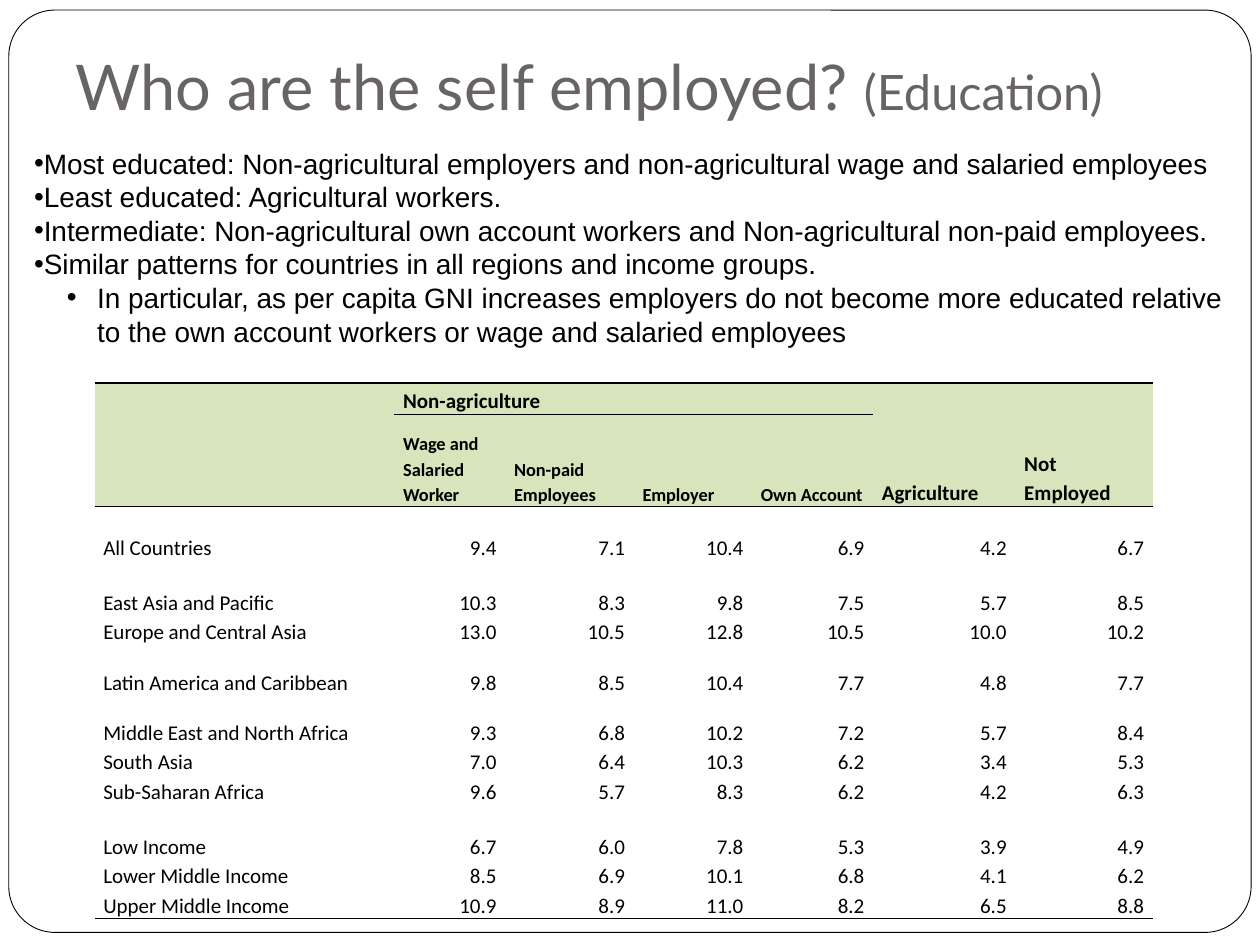
from lxml.etree import SubElement as Sub
from pptx import Presentation
from pptx.dml.color import RGBColor as RGB
from pptx.enum.shapes import MSO_SHAPE as Geo
from pptx.enum.text import MSO_ANCHOR as Anchor, MSO_AUTO_SIZE as Auto, PP_ALIGN as Align
from pptx.oxml.ns import qn
from pptx.util import Inches, Pt

BLACK = RGB(0, 0, 0)
WHITE = RGB(255, 255, 255)
GREY = RGB(0x69, 0x64, 0x64)
GREEN = RGB(0xD7, 0xE4, 0xBC)

POINTS = [
    (0, "Most educated: Non-agricultural employers and non-agricultural wage and salaried employees"),
    (0, "Least educated: Agricultural workers."),
    (0, "Intermediate: Non-agricultural own account workers and Non-agricultural non-paid employees."),
    (0, "Similar patterns for countries in all regions and income groups."),
    (1, "In particular, as per capita GNI increases employers do not become more educated "
        "relative to the own account workers or wage and salaried employees"),
]
WIDTHS = [2.38, 0.88, 1.02, 0.94, 0.96, 1.13, 1.09]
GROUP = ["", "Non-agriculture"]
HEADS = ["", "Wage and Salaried Worker", "Non-paid Employees", "Employer",
         "Own Account", "Agriculture", "Not Employed"]
# An empty row is a gap between groups
ROWS = [
    [],
    ["All Countries", 9.4, 7.1, 10.4, 6.9, 4.2, 6.7],
    [],
    ["East Asia and Pacific", 10.3, 8.3, 9.8, 7.5, 5.7, 8.5],
    ["Europe and Central Asia", 13.0, 10.5, 12.8, 10.5, 10.0, 10.2],
    ["Latin America and Caribbean", 9.8, 8.5, 10.4, 7.7, 4.8, 7.7],
    ["Middle East and North Africa", 9.3, 6.8, 10.2, 7.2, 5.7, 8.4],
    ["South Asia", 7.0, 6.4, 10.3, 6.2, 3.4, 5.3],
    ["Sub-Saharan Africa", 9.6, 5.7, 8.3, 6.2, 4.2, 6.3],
    [],
    ["Low Income", 6.7, 6.0, 7.8, 5.3, 3.9, 4.9],
    ["Lower Middle Income", 8.5, 6.9, 10.1, 6.8, 4.1, 6.2],
    ["Upper Middle Income", 10.9, 8.9, 11.0, 8.2, 6.5, 8.8],
]
TALL = {7: 0.4, 8: 0.4}


class Deck:
    def __init__(self):
        self.prs = Presentation()
        self.prs.slide_width, self.prs.slide_height = Inches(10), Inches(7.5)
        self.slide = self.prs.slides.add_slide(self.prs.slide_layouts[1])
        self.shapes = self.slide.shapes

    def place(self, shape, x, y, w, h):
        shape.left, shape.top = Inches(x), Inches(y)
        shape.width, shape.height = Inches(w), Inches(h)

    def run(self, para, text, size, font, color=BLACK, bold=False):
        run = para.add_run()
        run.text = text
        run.font.size, run.font.name, run.font.bold = Pt(size), font, bold
        run.font.color.rgb = color

    def frame(self, x, y, w, h):
        box = self.shapes.add_shape(Geo.ROUNDED_RECTANGLE, *map(Inches, (x, y, w, h)))
        box.adjustments[0] = 0.05
        box.shadow.inherit = False
        box.fill.solid()
        box.fill.fore_color.rgb = WHITE
        box.line.color.rgb, box.line.width = BLACK, Pt(0.5)
        tree = box.element.getparent()
        tree.insert(2, box.element)

    def title(self, parts, *area):
        shape = self.shapes.title
        self.place(shape, *area)
        text = shape.text_frame
        text.auto_size, text.vertical_anchor = Auto.NONE, Anchor.BOTTOM
        text.margin_bottom = Inches(0.1)
        para = text.paragraphs[0]
        para.alignment = Align.LEFT
        for words, size in parts:
            self.run(para, words, size, "Lato", GREY)

    def list(self, points, *area):
        shape = self.slide.placeholders[1]
        self.place(shape, *area)
        text = shape.text_frame
        text.auto_size, text.vertical_anchor = Auto.NONE, Anchor.MIDDLE
        for i, (level, words) in enumerate(points):
            para = text.add_paragraph() if i else text.paragraphs[0]
            para.level = level
            para.space_before, para.line_spacing = Pt(0), Pt(19.2)
            props = para._p.get_or_add_pPr()
            props.set("marL", str(Inches(0.5 * level)))
            props.set("indent", str(Inches(-0.24 * level)))
            Sub(props, qn("a:buFont"), typeface="Arial")
            Sub(props, qn("a:buChar"), char="•")
            self.run(para, words, 16, "Arial")

    def edges(self, cell, top, low):
        props = cell._tc.get_or_add_tcPr()
        for i, (side, on) in enumerate(zip("LRTB", (False, False, top, low))):
            line = Sub(props, qn("a:ln" + side), w=str(Pt(1)))
            props.insert(i, line)
            if on:
                fill = Sub(line, qn("a:solidFill"))
                Sub(fill, qn("a:srgbClr"), val=str(BLACK))
            else:
                Sub(line, qn("a:noFill"))

    def cell(self, cell, value, size, head, right):
        cell.vertical_anchor = Anchor.BOTTOM
        cell.margin_left = cell.margin_right = Inches(0.07)
        cell.margin_top = cell.margin_bottom = 0
        if head:
            cell.fill.solid()
            cell.fill.fore_color.rgb = GREEN
        else:
            cell.fill.background()
        para = cell.text_frame.paragraphs[0]
        if value == "":
            Sub(para._p, qn("a:endParaRPr"), sz="1000")
            return
        para.line_spacing = 1.15
        if right:
            para.alignment = Align.RIGHT
        self.run(para, str(value), size, "Calibri", bold=head)

    def table(self, rows, widths, x, y):
        high = [0.25, 0.73] + [TALL.get(r, 0.2) for r in range(2, len(rows))]
        area = map(Inches, (x, y, sum(widths), sum(high)))
        table = self.shapes.add_table(len(rows), len(widths), *area).table
        table.first_row = table.horz_banding = False
        for col, w in zip(table.columns, widths):
            col.width = Inches(w)
        for row, h in zip(table.rows, high):
            row.height = Inches(h)

        # True where a rule runs under row r
        def ruled(r, c):
            return r in (-1, 1, len(rows) - 1) or (r == 0 and 1 <= c <= 4)

        for r, row in enumerate(rows):
            for c in range(len(widths)):
                cell = table.cell(r, c)
                value = row[c] if c < len(row) else ""
                size = 10.5 if r == 1 and c < 5 else 12
                self.cell(cell, value, size, r < 2, r > 1 and c > 0)
                self.edges(cell, ruled(r - 1, c), ruled(r, c))
        table.cell(0, 1).merge(table.cell(0, 2))


deck = Deck()

# Border, title and findings
deck.frame(0.07, 0.08, 9.86, 7.32)
deck.title([("Who are the self employed? ", 36), ("(Education)", 27.9)], 0.5, 0.3, 9.25, 0.78)
deck.list(POINTS, 0.17, 1.1, 9.67, 1.72)

# Years of education by region and income group
deck.table([GROUP, HEADS] + ROWS, WIDTHS, 0.75, 3.04)

deck.prs.save("out.pptx")
